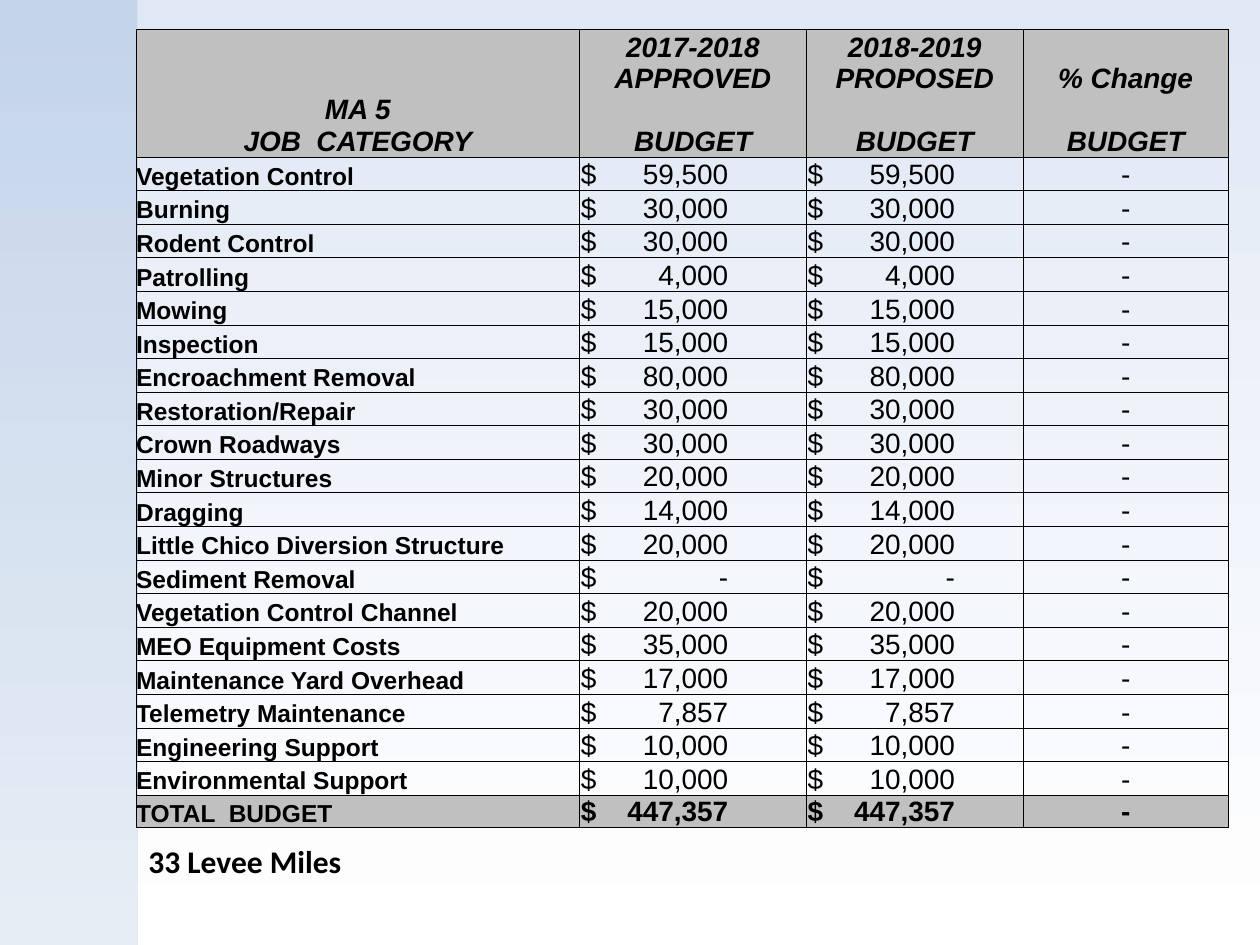
"""Build the MA 5 job category budget slide."""
from lxml import etree
from pptx import Presentation
from pptx.dml.color import RGBColor
from pptx.enum.shapes import MSO_SHAPE
from pptx.enum.text import MSO_ANCHOR, MSO_AUTO_SIZE, PP_ALIGN
from pptx.oxml.ns import qn
from pptx.util import Inches, Pt

RECT = MSO_SHAPE.RECTANGLE
BOTTOM = MSO_ANCHOR.BOTTOM
FIT = MSO_AUTO_SIZE.SHAPE_TO_FIT_TEXT
LEFT, CENTER = PP_ALIGN.LEFT, PP_ALIGN.CENTER
BLACK = RGBColor(0x00, 0x00, 0x00)
GRAY = RGBColor(0xC0, 0xC0, 0xC0)
TOTAL_GRAY = RGBColor(0xBF, 0xBF, 0xBF)
BG_TOP = RGBColor(0xE1, 0xE8, 0xF5)
WHITE = RGBColor(0xFF, 0xFF, 0xFF)
BAND_TOP = RGBColor(0xB9, 0xCD, 0xE5)
BAND_BOTTOM = RGBColor(0xDC, 0xE6, 0xF2)

HEADER = [
    ("MA 5\nJOB  CATEGORY", "2017-2018", "2018-2019", ""),
    ("", "APPROVED", "PROPOSED", "% Change"),
    ("", "BUDGET", "BUDGET", "BUDGET"),
]
JOBS = [
    ("Vegetation Control", "59,500"),
    ("Burning", "30,000"),
    ("Rodent Control", "30,000"),
    ("Patrolling", "4,000"),
    ("Mowing", "15,000"),
    ("Inspection", "15,000"),
    ("Encroachment Removal", "80,000"),
    ("Restoration/Repair", "30,000"),
    ("Crown Roadways", "30,000"),
    ("Minor Structures", "20,000"),
    ("Dragging", "14,000"),
    ("Little Chico Diversion Structure", "20,000"),
    ("Sediment Removal", "-"),
    ("Vegetation Control Channel", "20,000"),
    ("MEO Equipment Costs", "35,000"),
    ("Maintenance Yard Overhead", "17,000"),
    ("Telemetry Maintenance", "7,857"),
    ("Engineering Support", "10,000"),
    ("Environmental Support", "10,000"),
    ("TOTAL  BUDGET", "447,357"),
]
COL_WIDTHS = [3.52, 1.8, 1.72, 1.63]
HEADER_HEIGHTS = [0.25, 0.25, 0.49]
JOBS_HEIGHT, TOTAL_HEIGHT = 5.07, 0.26
AMOUNT_TAB = 1.17

HEAD_FONT = {"name": "Arial", "size": Pt(16), "bold": True, "italic": True}
LABEL_FONT = {"name": "Arial", "size": Pt(14), "bold": True}
VALUE_FONT = {"name": "Arial", "size": Pt(16), "bold": False}
TOTAL_FONT = {**VALUE_FONT, "bold": True}
NOTE_FONT = {"name": "Calibri", "size": Pt(18), "bold": True}


def set_gradient(fill, colors):
    fill.gradient()
    fill.gradient_angle = 270
    for stop, color in zip(fill.gradient_stops, colors):
        stop.color.rgb = color


def add_text(p, text, font):
    r = p.add_run()
    r.text = text
    r.font.color.rgb = BLACK
    for name, value in font.items():
        setattr(r.font, name, value)


def set_borders(cell, sides):
    tcPr = cell._tc.get_or_add_tcPr()
    for i, side in enumerate("LRTB"):
        ln = etree.Element(qn(f"a:ln{side}"), w=str(Pt(0.5)))
        if side in sides:
            fill = etree.SubElement(ln, qn("a:solidFill"))
            etree.SubElement(fill, qn("a:srgbClr"), val=str(BLACK))
        else:
            etree.SubElement(ln, qn("a:noFill"))
        tcPr.insert(i, ln)


def fill_cell(cell, text, font, align, color=None, sides="LRTB", inset=0, tab=None):
    cell.vertical_anchor = BOTTOM
    cell.margin_left = cell.margin_right = cell.margin_top = Inches(inset)
    cell.margin_bottom = 0
    if color is None:
        cell.fill.background()
    else:
        cell.fill.solid()
        cell.fill.fore_color.rgb = color
    set_borders(cell, sides)
    for i, line in enumerate(text.split("\n")):
        tf = cell.text_frame
        p = tf.add_paragraph() if i else tf.paragraphs[0]
        p.alignment = align
        if tab:
            tabs = etree.SubElement(p._p.get_or_add_pPr(), qn("a:tabLst"))
            etree.SubElement(tabs, qn("a:tab"), pos=str(Inches(tab)), algn="r")
        if line:
            add_text(p, line, font)
        else:
            size = str(int(font["size"].pt * 100))
            etree.SubElement(p._p, qn("a:endParaRPr"), sz=size)


def add_budget_table(s):
    n_head, n_jobs = len(HEADER), len(JOBS) - 1
    heights = HEADER_HEIGHTS + [JOBS_HEIGHT / n_jobs] * n_jobs + [TOTAL_HEIGHT]
    sp = s.shapes.add_table(len(heights), len(COL_WIDTHS), Inches(1.08), Inches(0.23),
                            Inches(sum(COL_WIDTHS)), Inches(sum(heights)))
    table = sp.table
    table.first_row = table.horz_banding = False
    for col, width in zip(table.columns, COL_WIDTHS):
        col.width = Inches(width)
    for row, height in zip(table.rows, heights):
        row.height = Inches(height)

    table.cell(0, 0).merge(table.cell(n_head - 1, 0))
    for i, row in enumerate(HEADER):
        sides = "LR" + "T" * (i == 0) + "B" * (i == n_head - 1)
        for j, text in enumerate(row):
            fill_cell(table.cell(i, j), text, HEAD_FONT, CENTER, GRAY,
                      sides if j else "LRTB")

    for i, (job, amount) in enumerate(JOBS):
        total = i == n_jobs
        color = GRAY if total else None
        font = TOTAL_FONT if total else VALUE_FONT
        cells = table.rows[n_head + i].cells
        fill_cell(cells[0], job, LABEL_FONT, LEFT, color)
        for j in (1, 2):
            fill_cell(cells[j], f"$\t{amount}", font, LEFT, color,
                      inset=0.01, tab=AMOUNT_TAB)
        fill_cell(cells[3], "-", font, CENTER, TOTAL_GRAY if total else None, inset=0.01)


def main():
    prs = Presentation()
    prs.slide_width, prs.slide_height = Inches(10), Inches(7.5)
    s = prs.slides.add_slide(prs.slide_layouts[6])
    set_gradient(s.background.fill, (BG_TOP, WHITE))

    band = s.shapes.add_shape(RECT, 0, 0, Inches(1.09), Inches(7.5))
    band.shadow.inherit = False
    band.line.fill.background()
    set_gradient(band.fill, (BAND_TOP, BAND_BOTTOM))
    for clr in band._element.spPr.iter(qn("a:srgbClr")):
        etree.SubElement(clr, qn("a:alpha"), val="70000")

    add_budget_table(s)

    note = s.shapes.add_textbox(Inches(1.08), Inches(6.63), Inches(1.74), Inches(0.4))
    tf = note.text_frame
    tf.word_wrap = False
    tf.auto_size = FIT
    add_text(tf.paragraphs[0], "33 Levee Miles", NOTE_FONT)
    prs.save("out.pptx")


if __name__ == "__main__":
    main()
